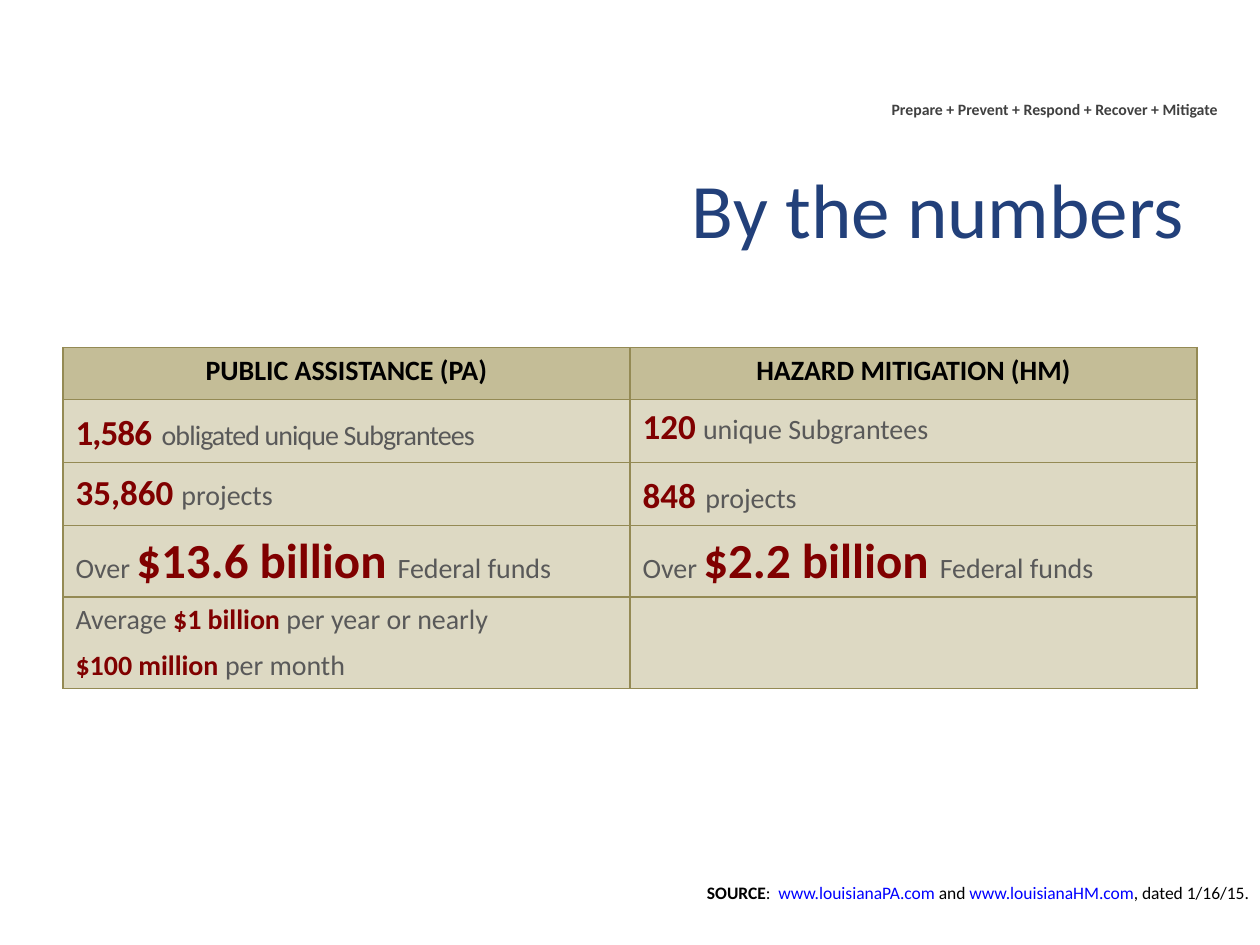
from lxml import etree
from pptx import Presentation
from pptx.dml.color import RGBColor
from pptx.enum import text
from pptx.oxml.ns import qn
from pptx.util import Inches, Pt

FONT = "Calibri"
COLORS = {
    "black": "000000", "motto": "404040", "title": "22407A", "link": "0000FF",
    "figure": "800000", "body": "595959", "header": "C4BD97",
    "cell": "DDD9C3", "border": "948A54",
}

# Run styles: size, colour, bold, letter spacing in points
STYLES = {
    "motto": (9, "motto", True, 0),
    "title": (44, "title", False, 0),
    "header": (16, "black", True, 0),
    "body": (16, "body", False, 0),
    "body tight": (16, "body", False, -0.5),
    "figure": (16, "figure", True, 0),
    "count": (20, "figure", True, 0),
    "count tight": (20, "figure", True, -0.5),
    "total": (28, "figure", True, 0),
    "gap": (24, "figure", False, 0),
    "gap tight": (24, "figure", False, -0.5),
    "small gap": (18, "body", False, 0),
    "source": (10, "black", False, 0),
    "source label": (10, "black", True, 0),
    "link": (10, "link", False, 0),
}

MOTTO = [("Prepare + Prevent + Respond + Recover + Mitigate", "motto")]
TITLE = [("By the numbers", "title")]
SOURCE = [
    ("SOURCE", "source label"), (":  ", "source"),
    ("www.louisianaPA.com ", "link"), ("and ", "source"),
    ("www.louisianaHM.com", "link"), (", dated 1/16/15.", "source"),
]

# Each cell is a list of paragraphs, each paragraph a list of (text, style)
ROWS = [
    ([[("PUBLIC ASSISTANCE (PA)", "header")]],
     [[("HAZARD MITIGATION (HM)", "header")]]),
    ([[("1,586", "count tight"), (" ", "gap tight"),
       ("obligated unique Subgrantees", "body tight")]],
     [[("120", "count"), (" ", "small gap"), ("unique Subgrantees", "body")]]),
    ([[("35,860 ", "count"), ("projects", "body")]],
     [[("848", "count"), (" ", "gap"), ("projects", "body")]]),
    ([[("Over ", "body"), ("$13.6 billion ", "total"), ("Federal funds", "body")]],
     [[("Over ", "body"), ("$2.2 billion ", "total"), ("Federal funds", "body")]]),
    ([[("Average ", "body"), ("$1 billion ", "figure"), ("per year or nearly", "body")],
      [("$100 million ", "figure"), ("per month", "body")]],
     []),
]
PROJECTS_ROW = 2
ROW_HEIGHT = 0.41
COLUMN_WIDTH = 4.5


def rgb(name):
    return RGBColor.from_string(COLORS[name])


def write(frame, paragraphs, align):
    for i, runs in enumerate(paragraphs):
        paragraph = frame.add_paragraph() if i else frame.paragraphs[0]
        paragraph.alignment = align
        if i:
            paragraph.space_before = Pt(6.7)
        for words, style in runs:
            size, color, bold, spacing = STYLES[style]
            run = paragraph.add_run()
            run.text = words
            for key, value in dict(name=FONT, size=Pt(size), bold=bold).items():
                setattr(run.font, key, value)
            run.font.color.rgb = rgb(color)
            if spacing:
                run.font._element.set("spc", str(int(spacing * 100)))


def add_line(slide, box, runs, wrap=True, anchor=text.MSO_ANCHOR.TOP):
    """Add one right-aligned line of text."""
    frame = slide.shapes.add_textbox(*map(Inches, box)).text_frame
    frame.word_wrap = wrap
    frame.vertical_anchor = anchor
    write(frame, [runs], text.PP_ALIGN.RIGHT)


def add_borders(cell):
    properties = cell._tc.get_or_add_tcPr()
    for side in ("lnL", "lnR", "lnT", "lnB"):
        line = etree.SubElement(properties, qn("a:" + side), w=str(Pt(1)))
        fill = etree.SubElement(line, qn("a:solidFill"))
        etree.SubElement(fill, qn("a:srgbClr"), val=COLORS["border"])


def add_numbers_table(slide):
    columns = len(ROWS[0])
    table = slide.shapes.add_table(
        len(ROWS), columns, Inches(0.5), Inches(2.76),
        Inches(COLUMN_WIDTH * columns), Inches(ROW_HEIGHT * len(ROWS))).table
    table.horz_banding = False
    for r, row in enumerate(ROWS):
        table.rows[r].height = Inches(ROW_HEIGHT)
        for c, paragraphs in enumerate(row):
            cell = table.cell(r, c)
            add_borders(cell)
            cell.fill.solid()
            cell.fill.fore_color.rgb = rgb("cell" if r else "header")
            if r == PROJECTS_ROW:
                cell.vertical_anchor = text.MSO_ANCHOR.MIDDLE
            write(cell.text_frame, paragraphs,
                  text.PP_ALIGN.LEFT if r else text.PP_ALIGN.CENTER)


def main():
    deck = Presentation()
    deck.slide_width, deck.slide_height = Inches(10), Inches(7.5)
    slide = deck.slides.add_slide(deck.slide_layouts[6])
    add_line(slide, (4.36, 0.74, 5.4, 0.25), MOTTO)
    add_line(slide, (0.5, 1.26, 9, 0.77), TITLE, anchor=text.MSO_ANCHOR.MIDDLE)
    add_numbers_table(slide)
    add_line(slide, (5.37, 6.95, 4.64, 0.27), SOURCE, wrap=False)
    deck.save("out.pptx")


if __name__ == "__main__":
    main()
